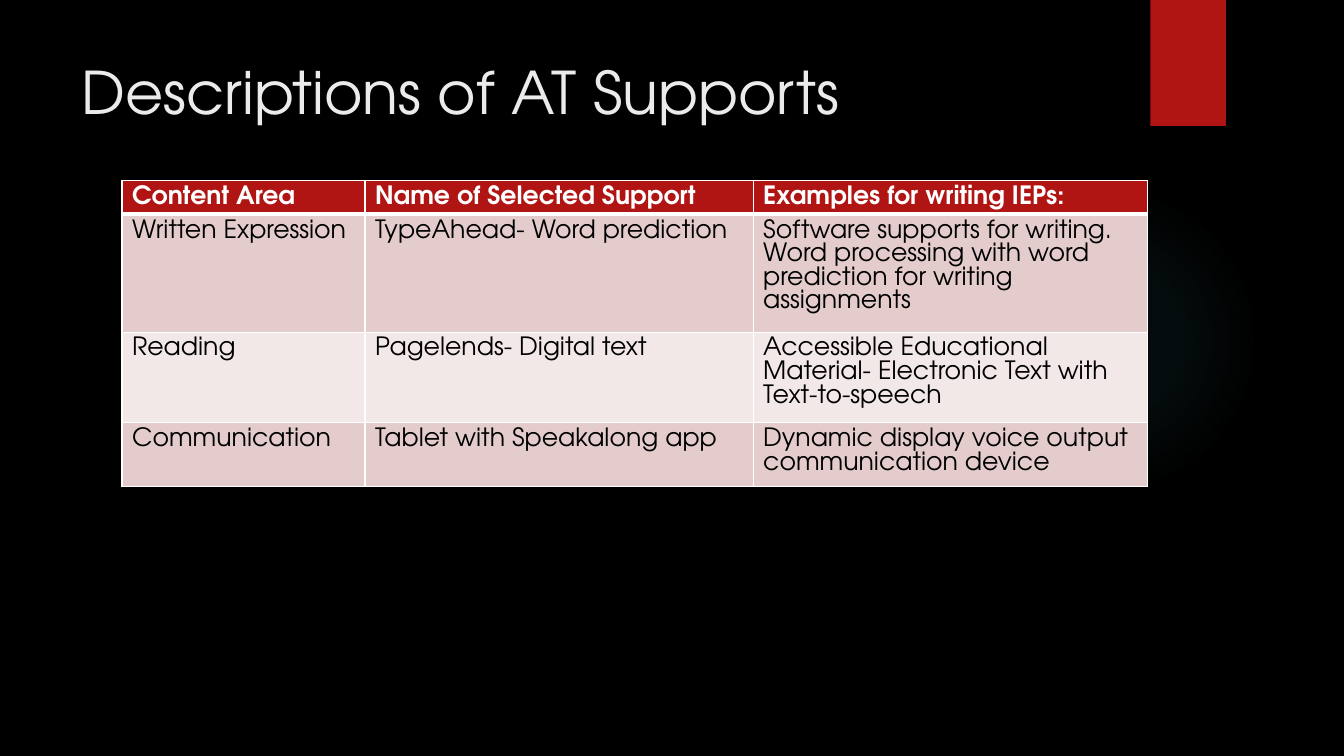
from dataclasses import dataclass

from lxml import etree
from pptx import Presentation
from pptx import util as u
from pptx.dml.color import RGBColor
from pptx.enum import shapes, text
from pptx.oxml import ns

FONT = "TeX Gyre Adventor"
RED, WHITE, BLACK = "B01513", "FFFFFF", "000000"
GLOW = "50B9C1"


@dataclass
class SupportRow:
    height: float
    fill: str
    color: str
    bold: bool
    top_line: float
    bottom_line: float
    texts: tuple[str, str, str]


COLUMNS = (2.41, 3.85, 3.91)
ROWS = (
    SupportRow(0.33, RED, WHITE, True, 1, 3,
               ("Content Area", "Name of Selected Support", "Examples for writing IEPs:")),
    SupportRow(1.17, "E4CCCC", BLACK, False, 3, 1,
               ("Written Expression", "TypeAhead- Word prediction",
                "Software supports for writing. Word processing with word prediction "
                "for writing assignments")),
    SupportRow(0.9, "F2E8E7", BLACK, False, 1, 1,
               ("Reading", "Pagelends- Digital text",
                "Accessible Educational Material- Electronic Text with Text-to-speech")),
    SupportRow(0.63, "E4CCCC", BLACK, False, 1, 1,
               ("Communication", "Tablet with Speakalong app",
                "Dynamic display voice output communication device")),
)


def rgb(value: str) -> RGBColor:
    return RGBColor.from_string(value)


def style(para, size: float, color: str, bold: bool = False) -> None:
    for span in para.runs:
        span.font.name = FONT
        span.font.size = u.Pt(size)
        span.font.bold = bold
        span.font.color.rgb = rgb(color)


def add_panel(page, kind, left: float, top: float, width: float, height: float):
    panel = page.shapes.add_shape(kind, *map(u.Inches, (left, top, width, height)))
    panel.shadow.inherit = False
    panel.line.fill.background()
    return panel


def add_glow(page) -> None:
    glow = add_panel(page, shapes.MSO_SHAPE.OVAL, 9.41, 1.83, 3.08, 3.08)
    stops = "".join(
        f'<a:gs pos="{place * 1000}"><a:srgbClr val="{GLOW}">'
        f'<a:alpha val="{alpha * 1000}"/></a:srgbClr></a:gs>'
        for place, alpha in ((0, 7), (36, 6), (69, 0))
    )
    gradient = etree.fromstring(
        f'<a:gradFill {ns.nsdecls("a")}><a:gsLst>{stops}</a:gsLst><a:path path="circle">'
        '<a:fillToRect l="50000" t="50000" r="50000" b="50000"/></a:path></a:gradFill>'
    )
    glow._element.spPr.find(ns.qn("a:prstGeom")).addnext(gradient)


def add_borders(cell, top: float, bottom: float) -> None:
    properties = cell._tc.get_or_add_tcPr()
    sides = (("lnL", 1), ("lnR", 1), ("lnT", top), ("lnB", bottom))
    for index, (side, width) in enumerate(sides):
        properties.insert(index, etree.fromstring(
            f'<a:{side} {ns.nsdecls("a")} w="{u.Pt(width)}"><a:solidFill>'
            f'<a:srgbClr val="{WHITE}"/></a:solidFill></a:{side}>'
        ))


def add_supports(page) -> None:
    table = page.shapes.add_table(
        len(ROWS), len(COLUMNS), u.Inches(1.21), u.Inches(1.79),
        u.Inches(sum(COLUMNS)), u.Inches(sum(row.height for row in ROWS)),
    ).table
    for column, width in zip(table.columns, COLUMNS):
        column.width = u.Inches(width)
    for row_index, row in enumerate(ROWS):
        table.rows[row_index].height = u.Inches(row.height)
        for cell, words in zip(table.rows[row_index].cells, row.texts):
            cell.fill.solid()
            cell.fill.fore_color.rgb = rgb(row.fill)
            add_borders(cell, row.top_line, row.bottom_line)
            cell.text_frame.text = words
            para = cell.text_frame.paragraphs[0]
            para.line_spacing = u.Pt(16.9)
            style(para, 18, row.color, row.bold)


def set_title(page) -> None:
    title = page.shapes.title
    title.left, title.top, title.width, title.height = map(u.Inches, (0.71, 0.5, 10.29, 1.53))
    frame = title.text_frame
    frame.text = "Descriptions of AT Supports"
    frame.vertical_anchor = text.MSO_ANCHOR.TOP
    frame.paragraphs[0].alignment = text.PP_ALIGN.LEFT
    style(frame.paragraphs[0], 42, "EBEBEB")


def main() -> None:
    """Build the slide of assistive technology supports."""
    deck = Presentation()
    deck.slide_width, deck.slide_height = u.Inches(13.33), u.Inches(7.5)
    page = deck.slides.add_slide(deck.slide_layouts[5])
    page.background.fill.solid()
    page.background.fill.fore_color.rgb = rgb(BLACK)
    add_glow(page)
    ribbon = add_panel(page, shapes.MSO_SHAPE.RECTANGLE, 11.41, 0, 0.75, 1.25)
    ribbon.fill.solid()
    ribbon.fill.fore_color.rgb = rgb(RED)
    set_title(page)
    add_supports(page)
    deck.save("out.pptx")


if __name__ == "__main__":
    main()
